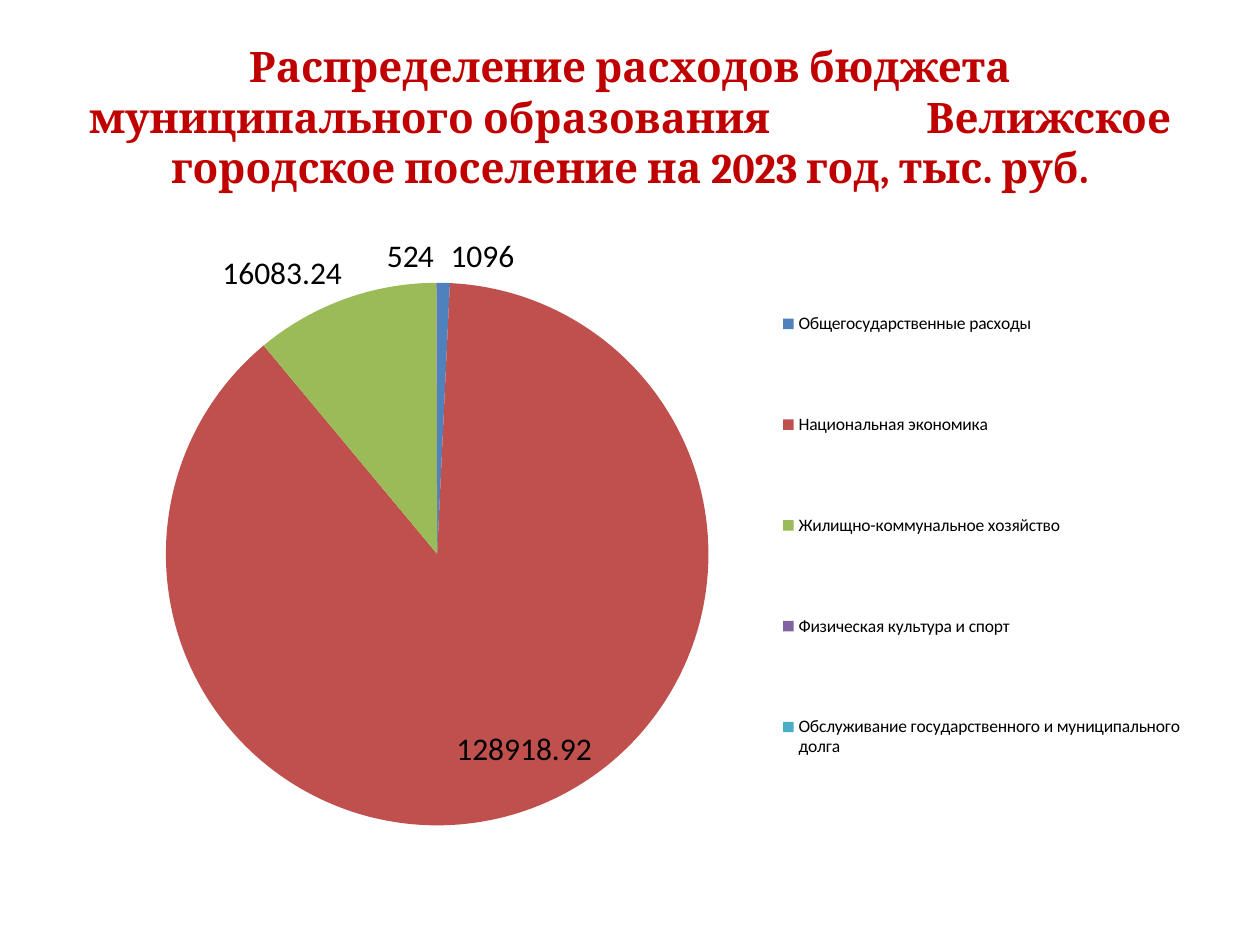
from dataclasses import dataclass

import pptx
import pptx.chart.data
import pptx.dml.color
import pptx.enum.chart
import pptx.enum.text
import pptx.oxml
import pptx.oxml.ns
import pptx.util


@dataclass(frozen=True)
class Theme:
    title_font: str = "Cambria"
    chart_font: str = "Calibri"
    title_size: int = 24
    label_size: int = 18
    legend_size: int = 10
    title_color: str = "C00000"
    text_color: str = "000000"
    slices: tuple = ("4F81BD", "C0504D", "9BBB59", "8064A2", "4BACC6")


EXPENSES = {
    "Общегосударственные расходы": 1096,
    "Национальная экономика": 128918.92,
    "Жилищно-коммунальное хозяйство": 16083.24,
    "Физическая культура и спорт": 52,
    "Обслуживание государственного и муниципального долга": 4,
}
# Sideways shift of the labels of the smallest slices, in shares of the chart's width
LABEL_SHIFTS = {3: -0.03, 4: -0.01}
# Each title span: text and extra letter spacing in points
TITLE_SPANS = (
    ("Распределение расходов бюджета муниципального образования", 0),
    (" ", 84),
    ("Велижское городское поселение на 2023 год, тыс. руб.", 0),
)


class SlideBuilder:
    def __init__(self, deck, theme):
        self.deck = deck
        self.theme = theme
        self.page = deck.slides.add_slide(deck.slide_layouts[6])

    def place(self, left, top, width, height):
        """Turn shares of the slide's size into lengths."""
        across, down = self.deck.slide_width, self.deck.slide_height
        return [pptx.util.Emu(round(length)) for length in
                (left * across, top * down, width * across, height * down)]

    def style(self, font, name, size, color, bold=False):
        font.name = name
        font.size = pptx.util.Pt(size)
        font.bold = bold
        font.color.rgb = pptx.dml.color.RGBColor.from_string(color)

    def add_title(self, spans, *area):
        theme = self.theme
        frame = self.page.shapes.add_textbox(*self.place(*area)).text_frame
        frame.word_wrap = True
        frame.vertical_anchor = pptx.enum.text.MSO_ANCHOR.MIDDLE
        para = frame.paragraphs[0]
        para.alignment = pptx.enum.text.PP_ALIGN.CENTER
        for text, spacing in spans:
            span = para.add_run()
            span.text = text
            self.style(span.font, theme.title_font, theme.title_size, theme.title_color, True)
            if spacing:
                span._r.get_or_add_rPr().set("spc", str(spacing * 100))

    def add_pie(self, values, label_shifts, *area):
        theme = self.theme
        data = pptx.chart.data.CategoryChartData()
        data.categories = list(values)
        data.add_series("Series 1", list(values.values()))
        kind = pptx.enum.chart.XL_CHART_TYPE.PIE
        chart = self.page.shapes.add_chart(kind, *self.place(*area), data).chart
        chart.has_title = False
        self.style(chart.font, theme.chart_font, theme.label_size, theme.text_color)

        plot = chart.plots[0]
        plot.vary_by_categories = True
        series = plot.series[0]
        for index, color in enumerate(theme.slices):
            fill = series.points[index].format.fill
            fill.solid()
            fill.fore_color.rgb = pptx.dml.color.RGBColor.from_string(color)
        self.add_labels(series, label_shifts)

        chart.has_legend = True
        legend = chart.legend
        legend.position = pptx.enum.chart.XL_LEGEND_POSITION.RIGHT
        legend.include_in_layout = False
        self.style(legend.font, theme.chart_font, theme.legend_size, theme.text_color)
        edges = {"xMode": "edge", "yMode": "edge"}
        self.set_layout(chart._chartSpace.chart.plotArea, 0, layoutTarget="inner",
                        **edges, x=0.09, y=0.1, w=0.48, h=0.87)
        self.set_layout(legend._element, 1, **edges, x=0.63, y=0.02, w=0.36, h=0.97)

    def add_labels(self, series, shifts):
        """Show values, moving some labels sideways so that none run together."""
        theme = self.theme
        labels = series.data_labels
        labels.show_value = True
        labels.show_percentage = False
        shifted = [series.points[index].data_label for index in shifts]
        for label in (labels, *shifted):
            label.position = pptx.enum.chart.XL_LABEL_POSITION.BEST_FIT
            self.style(label.font, theme.chart_font, theme.label_size, theme.text_color)
        elements = labels._element.findall(pptx.oxml.ns.qn("c:dLbl"))
        for element, shift in zip(elements, shifts.values()):
            self.set_layout(element, 1, x=shift, y=0)
        for leader in labels._element.findall(pptx.oxml.ns.qn("c:showLeaderLines")):
            leader.set("val", "0")

    def set_layout(self, element, index, **settings):
        """Fix a chart part's place, in shares of the chart's size."""
        for old in element.findall(pptx.oxml.ns.qn("c:layout")):
            element.remove(old)
        content = "".join(f'<c:{name} val="{value}"/>' for name, value in settings.items())
        element.insert(index, pptx.oxml.parse_xml(
            f'<c:layout {pptx.oxml.ns.nsdecls("c")}>'
            f'<c:manualLayout>{content}</c:manualLayout></c:layout>'))


def main():
    deck = pptx.Presentation()
    deck.slide_width = pptx.util.Inches(10)
    deck.slide_height = pptx.util.Inches(7.5)
    builder = SlideBuilder(deck, Theme())
    builder.add_title(TITLE_SPANS, 0.05, 0.04, 0.9, 1 / 6)
    builder.add_pie(EXPENSES, LABEL_SHIFTS, 0.05, 7 / 30, 0.9, 0.66)
    deck.save("out.pptx")


if __name__ == "__main__":
    main()
